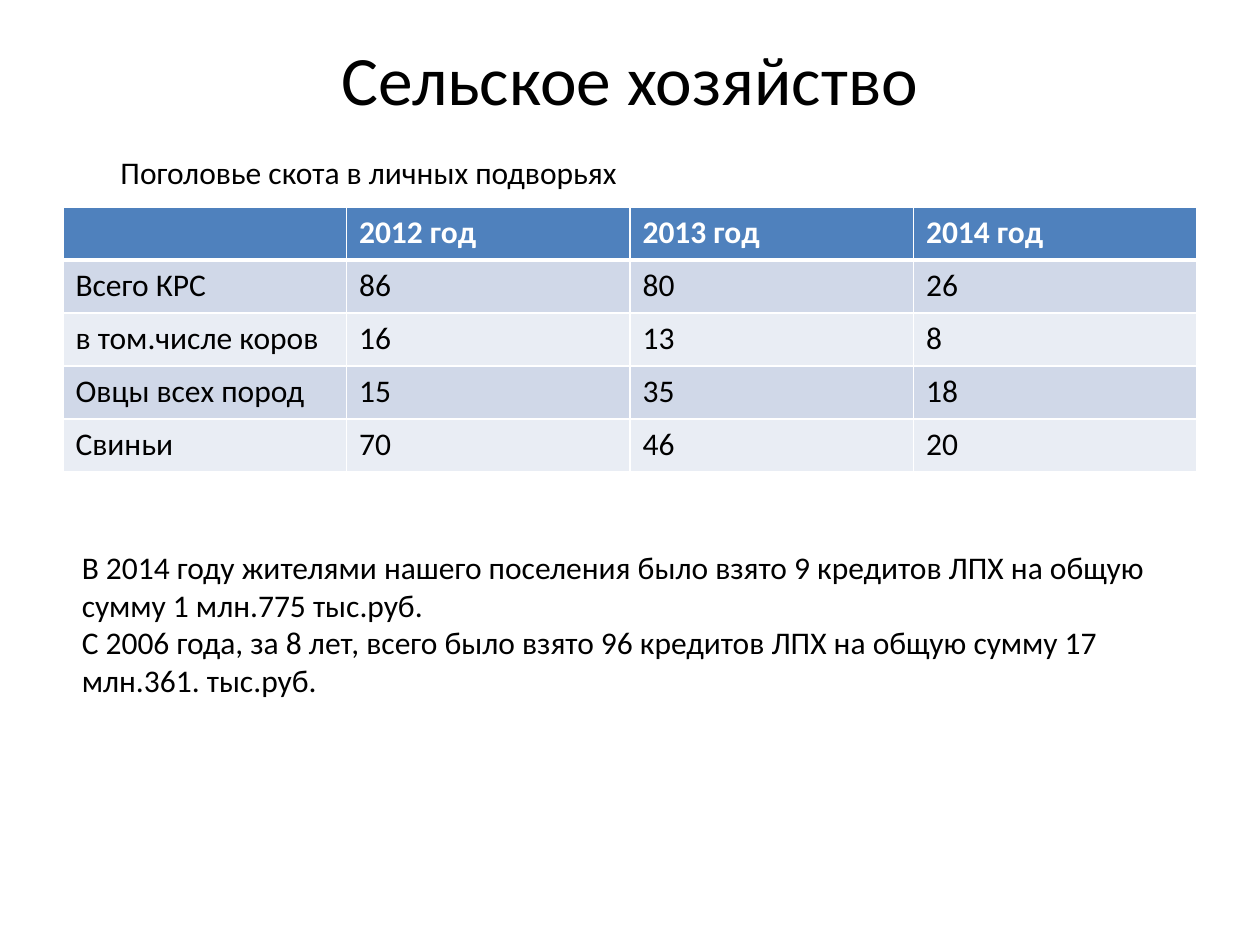
from lxml import etree
from pptx import Presentation
from pptx.dml.color import RGBColor
from pptx.enum.text import MSO_ANCHOR, MSO_AUTO_SIZE, PP_ALIGN
from pptx.oxml.ns import qn
from pptx.util import Cm, Pt

MIDDLE = MSO_ANCHOR.MIDDLE
CENTER = PP_ALIGN.CENTER
LEFT = PP_ALIGN.LEFT
NO_AUTOFIT = MSO_AUTO_SIZE.NONE
GROW = MSO_AUTO_SIZE.SHAPE_TO_FIT_TEXT
TITLE_ONLY = 5
FONT = "Calibri"
BLACK, WHITE = "000000", "FFFFFF"
HEADER_FILL = "4F81BD"
BAND_FILLS = ("E9EDF4", "D0D8E8")
LIVESTOCK = (
    ("", "2012 год", "2013 год", "2014 год"),
    ("Всего КРС", "86", "80", "26"),
    ("в том.числе коров", "16", "13", "8"),
    ("Овцы всех пород", "15", "35", "18"),
    ("Свиньи", "70", "46", "20"),
)
CREDITS = (
    "В 2014 году жителями нашего поселения было взято 9 кредитов ЛПХ "
    "на общую сумму 1 млн.775 тыс.руб.",
    "С 2006 года, за 8 лет, всего было взято 96 кредитов ЛПХ "
    "на общую сумму 17 млн.361. тыс.руб.",
)


def color(value):
    """Turn a hex string into a colour."""
    return RGBColor.from_string(value)


def write(para, text, size=18, fill=BLACK, bold=False, align=LEFT):
    """Write formatted text into a paragraph."""
    para.alignment = align
    para.font.size = Pt(size)
    span = para.add_run()
    span.text = text
    span.font.name = FONT
    span.font.size = Pt(size)
    span.font.bold = bold
    span.font.color.rgb = color(fill)


def add_title(page, text):
    """Place and fill the title placeholder."""
    title = page.shapes.title
    title.left, title.top, title.width, title.height = Cm(1.27), Cm(0.76), Cm(22.86), Cm(1.63)
    frame = title.text_frame
    frame.auto_size = NO_AUTOFIT
    frame.vertical_anchor = MIDDLE
    write(frame.paragraphs[0], text, size=39.6, align=CENTER)


def add_text(page, lines, left, top, width, height):
    """Add a wrapping text box with one paragraph per line."""
    frame = page.shapes.add_textbox(Cm(left), Cm(top), Cm(width), Cm(height)).text_frame
    frame.word_wrap = True
    frame.auto_size = GROW
    for index, line in enumerate(lines):
        write(frame.add_paragraph() if index else frame.paragraphs[0], line)


def add_borders(cell, top, bottom):
    """Draw white cell borders with the given top and bottom widths."""
    properties = cell._tc.get_or_add_tcPr()
    widths = {"lnL": 1, "lnR": 1, "lnT": top, "lnB": bottom}
    for index, (side, width) in enumerate(widths.items()):
        line = etree.Element(qn(f"a:{side}"), w=str(Pt(width)))
        solid = etree.SubElement(line, qn("a:solidFill"))
        etree.SubElement(solid, qn("a:srgbClr"), val=WHITE)
        properties.insert(index, line)


def add_livestock_table(page):
    """Add the banded livestock table."""
    table = page.shapes.add_table(
        len(LIVESTOCK), len(LIVESTOCK[0]), Cm(1.27), Cm(4.17), Cm(22.86), Cm(5.35)
    ).table
    for row, values in enumerate(LIVESTOCK):
        header = row == 0
        for column, value in enumerate(values):
            cell = table.cell(row, column)
            cell.fill.solid()
            cell.fill.fore_color.rgb = color(HEADER_FILL if header else BAND_FILLS[row % 2])
            add_borders(cell, top=3 if row == 1 else 1, bottom=3 if header else 1)
            if value:
                write(cell.text_frame.paragraphs[0], value,
                      fill=WHITE if header else BLACK, bold=header)


def main():
    """Build the agriculture slide."""
    deck = Presentation()
    deck.slide_width, deck.slide_height = Cm(25.4), Cm(19.05)
    page = deck.slides.add_slide(deck.slide_layouts[TITLE_ONLY])
    add_title(page, "Сельское хозяйство")
    add_livestock_table(page)
    add_text(page, CREDITS, 1.4, 10.92, 22.23, 3.33)
    add_text(page, ["Поголовье скота в личных подворьях"], 2.18, 2.97, 14.3, 1.8)
    deck.save("out.pptx")


if __name__ == "__main__":
    main()
